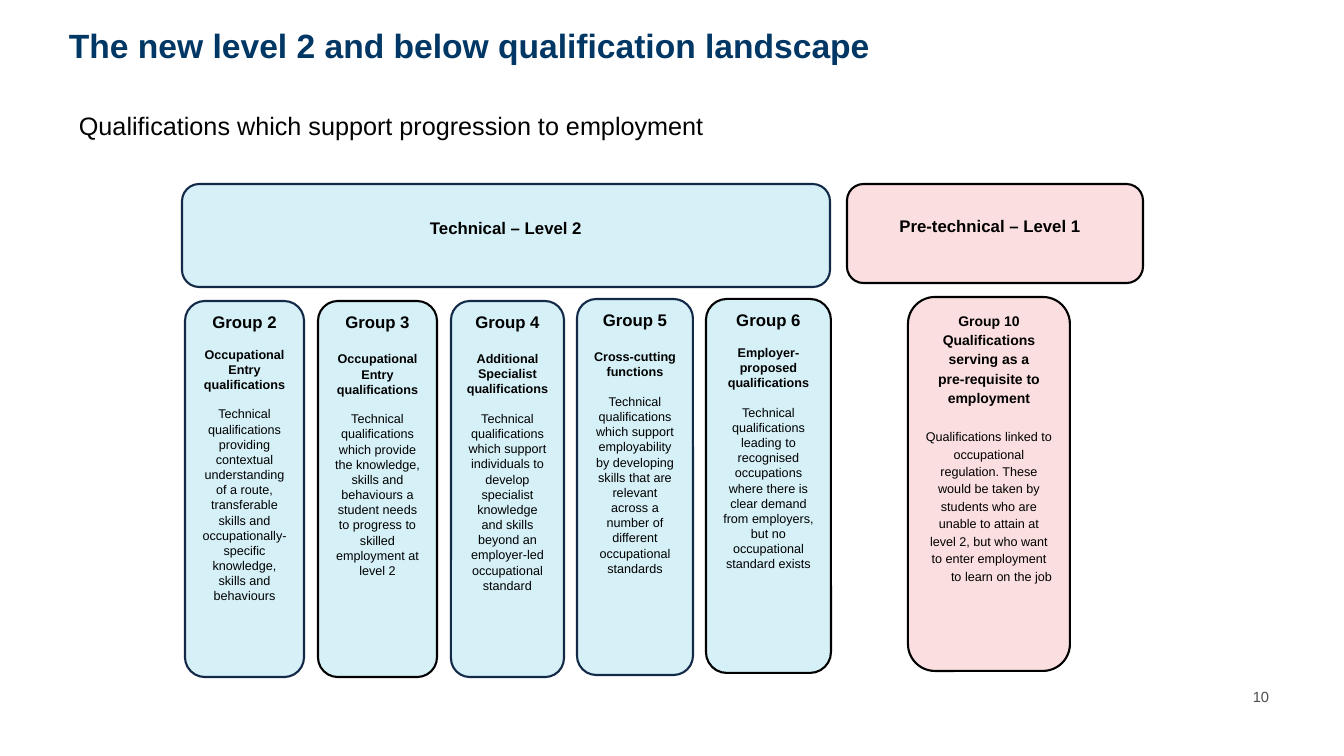
from pptx import Presentation
from pptx.dml.color import RGBColor
from pptx.enum.shapes import MSO_SHAPE
from pptx.enum.text import MSO_ANCHOR, PP_ALIGN
from pptx.util import Emu, Pt

ROUNDED = MSO_SHAPE.ROUNDED_RECTANGLE
TOP, MIDDLE = MSO_ANCHOR.TOP, MSO_ANCHOR.MIDDLE
LEFT, CENTER, RIGHT = PP_ALIGN.LEFT, PP_ALIGN.CENTER, PP_ALIGN.RIGHT

PX = 914400 / 100.8
INDENT = 25

THEME = {
    "font": "Arial",
    "title": "003764", "text": "000000", "number": "4D4D4D",
    "blue": "D5F1F7", "pink": "FBDEDF", "navy": "122947", "black": "000000",
    "title_size": 24, "subtitle_size": 18, "heading_size": 12,
    "number_size": 10.5, "pink_heading_size": 10, "body_size": 9,
    "outline": 1.5,
}


def add_line(frame, text, size, bold=False, color="text", align=CENTER,
             before=0, spacing=None, indent=0):
    """Write one paragraph, using the frame's empty first one if it is free."""
    paragraph = frame.paragraphs[0]
    if paragraph.runs:
        paragraph = frame.add_paragraph()
    paragraph.alignment = align
    paragraph.space_before = Pt(before)
    if spacing:
        paragraph.line_spacing = spacing
    if indent:
        properties = paragraph._p.get_or_add_pPr()
        properties.set("marL", str(round(indent * PX)))
        properties.set("indent", str(round(-indent * PX)))
    run = paragraph.add_run()
    run.text = text
    run.font.name = THEME["font"]
    run.font.size = Pt(THEME[size])
    run.font.bold = bold
    run.font.color.rgb = RGBColor.from_string(THEME[color])


def add_frame(box, fill=None, outline=None, anchor=TOP):
    """Add a text box, or a rounded card if a fill is given; return its text frame."""
    lengths = [Emu(round(value * PX)) for value in box]
    if fill:
        shape = slide.shapes.add_shape(ROUNDED, *lengths)
        shape.shadow.inherit = False
        shape.fill.solid()
        shape.fill.fore_color.rgb = RGBColor.from_string(THEME[fill])
        shape.line.color.rgb = RGBColor.from_string(THEME[outline])
        shape.line.width = Pt(THEME["outline"])
    else:
        shape = slide.shapes.add_textbox(*lengths)
    frame = shape.text_frame
    frame.word_wrap = True
    frame.vertical_anchor = anchor
    return frame


presentation = Presentation()
presentation.slide_width = Emu(round(1344 * PX))
presentation.slide_height = Emu(round(756 * PX))
slide = presentation.slides.add_slide(presentation.slide_layouts[6])

# Title, subtitle and page number
title = add_frame((69, 29, 1208, 56))
title.margin_left = title.margin_right = title.margin_top = title.margin_bottom = 0
add_line(title, "The new level 2 and below qualification landscape",
         "title_size", True, "title", LEFT, spacing=0.9)
subtitle = add_frame((69, 105, 672, 40))
add_line(subtitle, "Qualifications which support progression to employment",
         "subtitle_size", align=LEFT)
number = add_frame((1196, 683, 83, 40))
add_line(number, "10", "number_size", color="number", align=RIGHT)

# Header cards: box, fill, outline, right and bottom margins, heading
headers = [
    ((182, 184, 648, 103), "blue", "navy", 10, 21, "Technical – Level 2"),
    ((847, 184, 296, 99), "pink", "black", 20, 20, "Pre-technical – Level 1"),
]
for box, fill, outline, margin_right, margin_bottom, heading in headers:
    header = add_frame(box, fill, outline, MIDDLE)
    header.margin_right = Emu(round(margin_right * PX))
    header.margin_bottom = Emu(round(margin_bottom * PX))
    add_line(header, heading, "heading_size", True)

# Technical groups: box, outline, gap under the heading, name, description
groups = [
    ((185, 301, 119, 376), "navy", 10.35, "Occupational Entry qualifications",
     "Technical qualifications providing contextual understanding of a route, "
     "transferable skills and occupationally-specific knowledge, skills and behaviours"),
    ((318, 301, 119, 376), "black", 13.8, "Occupational Entry qualifications",
     "Technical qualifications which provide the knowledge, skills and behaviours "
     "a student needs to progress to skilled employment at level 2"),
    ((451, 301, 113, 376), "navy", 13.8, "Additional Specialist qualifications",
     "Technical qualifications which support individuals to develop specialist "
     "knowledge and skills beyond an employer-led occupational standard"),
    ((577, 299, 116, 376), "navy", 13.8, "Cross-cutting functions",
     "Technical qualifications which support employability by developing skills "
     "that are relevant across a number of different occupational standards"),
    ((706, 299, 125, 374), "black", 10.35, "Employer- proposed qualifications",
     "Technical qualifications leading to recognised occupations where there is "
     "clear demand from employers, but no occupational standard exists"),
]
for group_number, (box, outline, gap, name, description) in enumerate(groups, 2):
    group = add_frame(box, "blue", outline)
    add_line(group, f"Group {group_number}", "heading_size", True)
    add_line(group, name, "body_size", True, before=gap)
    add_line(group, description, "body_size", before=10.35)

# Pre-technical group
pre_technical = add_frame((908, 297, 162, 374), "pink", "black")
for text in ("Group 10", "Qualifications", "serving as a", "pre-requisite to",
             "employment"):
    add_line(pre_technical, text, "pink_heading_size", True,
             spacing=1.15, indent=INDENT)
description_lines = [
    "Qualifications linked to", "occupational", "regulation. These",
    "would be taken by", "students who are", "unable to attain at",
    "level 2, but who want", "to enter employment to learn on the job",
]
for index, text in enumerate(description_lines):
    add_line(pre_technical, text, "body_size", before=0 if index else 14.5,
             spacing=1.15, indent=INDENT)

presentation.save("out.pptx")
